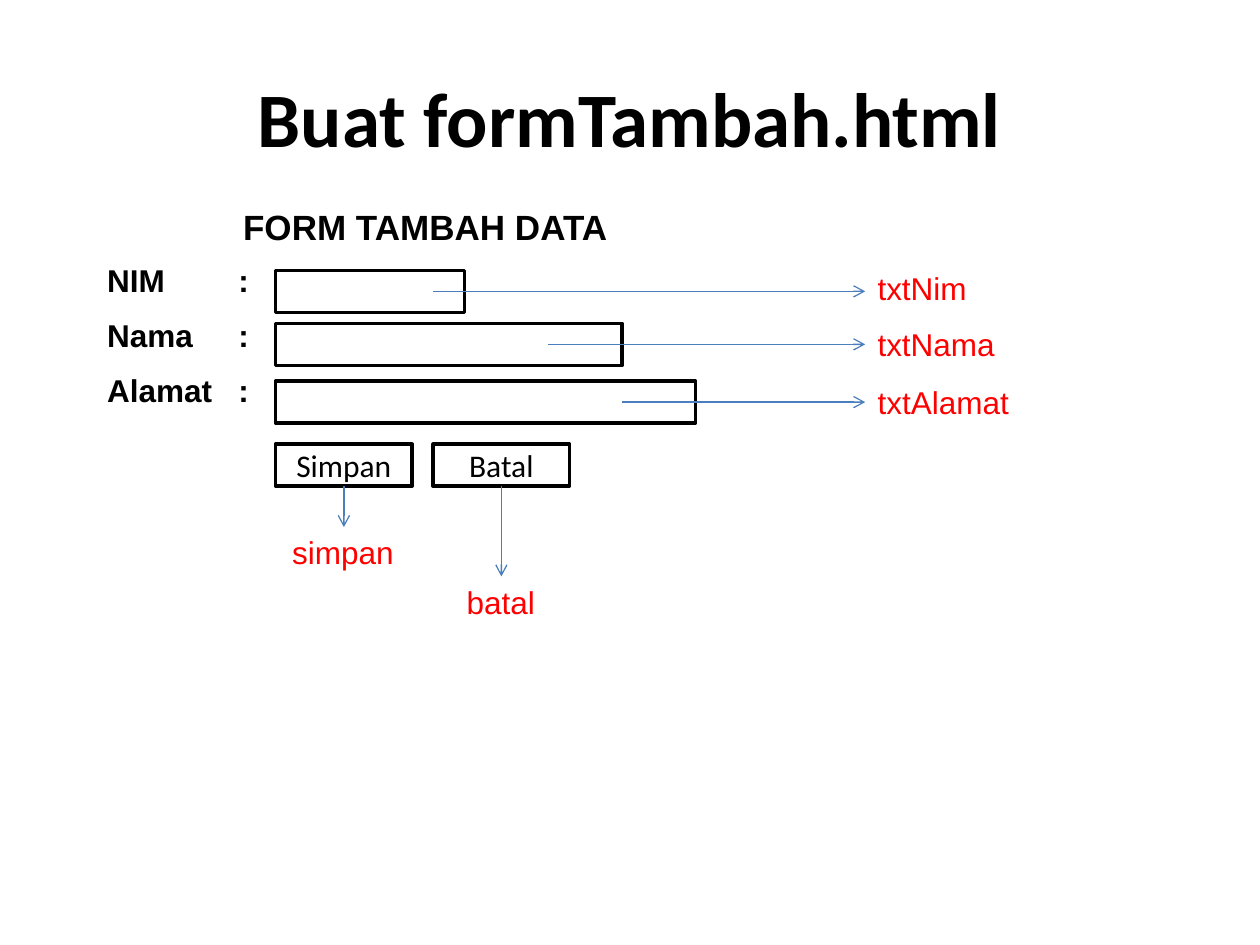
import pptx
import pptx.util
import pptx.dml.color
import pptx.enum.shapes
import pptx.enum.text
import pptx.oxml.ns
import lxml.etree

COLORS = {"ink": "000000", "paper": "FFFFFF", "note": "FF0000", "arrow": "4B7EBC"}
NO_GRID_STYLE = "{2D5ABB26-0587-4C30-8999-92F81FD0307C}"
CENTER = pptx.enum.text.PP_ALIGN.CENTER
LEFT = pptx.enum.text.PP_ALIGN.LEFT
MIDDLE = pptx.enum.text.MSO_ANCHOR.MIDDLE


def grid(units):
    """The slide is 120 columns by 90 rows, twelve to the inch."""
    return pptx.util.Inches(units / 12)


def rgb(name):
    return pptx.dml.color.RGBColor.from_string(COLORS[name])


class FormSlide:
    def __init__(self, slide):
        self.slide = slide

    def wording(self, frame, text, size=18, font="Arial", color="ink", bold=False, align=LEFT):
        paragraph = frame.paragraphs[0]
        paragraph.alignment = align
        run = paragraph.add_run()
        run.text = text
        run.font.size = pptx.util.Pt(size)
        run.font.name = font
        run.font.bold = bold
        run.font.color.rgb = rgb(color)

    def text(self, x, y, w, h, text, wrap=False, anchor=None, **style):
        frame = self.slide.shapes.add_textbox(*map(grid, (x, y, w, h))).text_frame
        frame.word_wrap = wrap
        if anchor is not None:
            frame.vertical_anchor = anchor
        self.wording(frame, text, **style)

    def note(self, x, y, w, text):
        self.text(x, y, w, 4.8, text, color="note")

    def box(self, x, y, w, h, text=""):
        box = self.slide.shapes.add_shape(
            pptx.enum.shapes.MSO_SHAPE.RECTANGLE, *map(grid, (x, y, w, h)))
        box.shadow.inherit = False
        box.fill.solid()
        box.fill.fore_color.rgb = rgb("paper")
        box.line.color.rgb = rgb("ink")
        box.line.width = pptx.util.Pt(2)
        if text:
            box.text_frame.vertical_anchor = MIDDLE
            self.wording(box.text_frame, text, font="Calibri", align=CENTER)

    def arrow(self, x1, y1, x2, y2):
        arrow = self.slide.shapes.add_connector(
            pptx.enum.shapes.MSO_CONNECTOR.STRAIGHT, *map(grid, (x1, y1, x2, y2)))
        arrow.line.color.rgb = rgb("arrow")
        arrow.line.width = pptx.util.Pt(0.75)
        qn = pptx.oxml.ns.qn
        properties = arrow.element.spPr
        lxml.etree.SubElement(properties.find(qn("a:ln")), qn("a:tailEnd"), type="arrow")
        lxml.etree.SubElement(properties, qn("a:effectLst"))

    def table(self, x, y, widths, row_height, heading, labels):
        rows = len(labels) + 2
        graphic = self.slide.shapes.add_table(
            rows, len(widths), grid(x), grid(y), grid(sum(widths)), grid(row_height * rows))
        table = graphic.table
        table.first_row = table.horz_banding = False
        style = next(graphic.element.iter(pptx.oxml.ns.qn("a:tableStyleId")))
        style.text = NO_GRID_STYLE
        for column, width in zip(table.columns, widths):
            column.width = grid(width)
        for row in table.rows:
            row.height = grid(row_height)
            for cell in row.cells:
                cell.fill.background()
                cell.margin_right = grid(0.5)
        table.cell(0, 0).merge(table.cell(0, len(widths) - 1))
        table.cell(0, 0).margin_right = grid(1.2)
        self.wording(table.cell(0, 0).text_frame, heading, size=20, bold=True, align=CENTER)
        for row, label in enumerate(labels, 1):
            for column, text in enumerate((label, ":")):
                self.wording(table.cell(row, column).text_frame, text, bold=True)


def main():
    deck = pptx.Presentation()
    deck.slide_width, deck.slide_height = grid(120), grid(90)
    form = FormSlide(deck.slides.add_slide(deck.slide_layouts[6]))

    # Title and form labels
    form.text(6, 3.6, 108, 15, "Buat formTambah.html", wrap=True, anchor=MIDDLE,
              size=44, font="Calibri", bold=True, align=CENTER)
    form.table(9, 19.3, (12.5, 3.5, 47), 5.25, "FORM TAMBAH DATA", ("NIM", "Nama", "Alamat"))

    # Input fields, each with an arrow to its name
    field_x, note_x, box_height = 26.25, 82.4, 4
    fields = (
        (25.75, 18, 41.25, "txtNim", 25, 11),
        (30.8, 33, 52.2, "txtNama", 30.4, 13.7),
        (36.3, 40, 59.25, "txtAlamat", 35.9, 15),
    )
    for y, width, arrow_x, name, note_y, note_width in fields:
        form.box(field_x, y, width, box_height)
        middle = y + box_height / 2
        form.arrow(arrow_x, middle, note_x, middle)
        form.note(note_x, note_y, note_width, name)

    # Buttons, each with an arrow down to its name
    button_y, button_width, button_step = 42.3, 13, 15
    buttons = (("Simpan", "simpan", 50.2, 12.2), ("Batal", "batal", 54.9, 9))
    for index, (caption, name, note_y, note_width) in enumerate(buttons):
        x = field_x + index * button_step
        center = x + button_width / 2
        form.box(x, button_y, button_width, box_height, caption)
        form.arrow(center, button_y + box_height, center, note_y)
        form.note(center - note_width / 2, note_y, note_width, name)

    deck.save("out.pptx")


if __name__ == "__main__":
    main()
